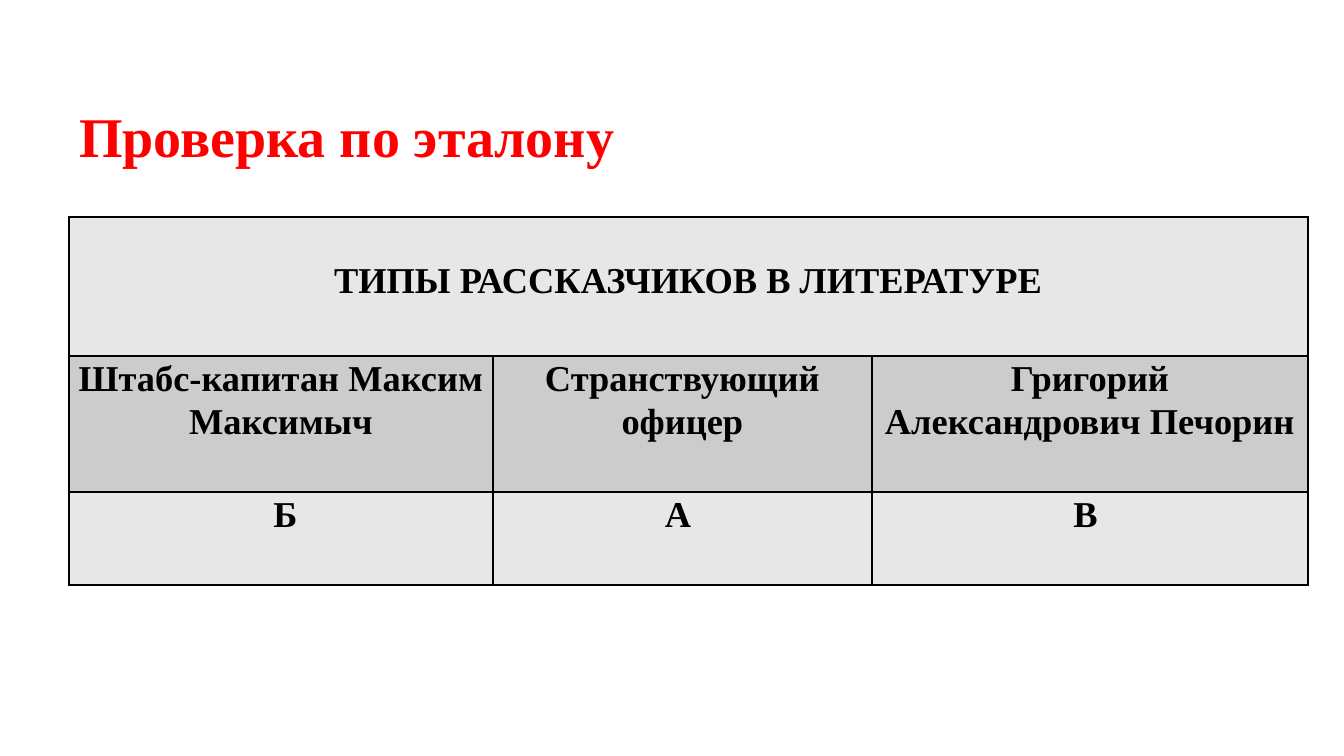
from lxml import etree
from pptx import Presentation
from pptx.dml.color import RGBColor
from pptx.enum.text import MSO_ANCHOR, PP_ALIGN
from pptx.oxml.ns import qn
from pptx.util import Pt

MIDDLE, TOP = MSO_ANCHOR.MIDDLE, MSO_ANCHOR.TOP
LEFT, CENTER = PP_ALIGN.LEFT, PP_ALIGN.CENTER
RED = RGBColor(0xFF, 0x00, 0x00)
BLACK = RGBColor(0x00, 0x00, 0x00)
LIGHT_GRAY = RGBColor(0xE7, 0xE7, 0xE7)
MID_GRAY = RGBColor(0xCC, 0xCC, 0xCC)
FONT = "Times New Roman"
EMU_PER_PX = 914400 / 100.8


def px(length):
    return round(length * EMU_PER_PX)


def format_paragraph(paragraph, size, color, alignment):
    paragraph.alignment = alignment
    paragraph.font.name = FONT
    paragraph.font.size = Pt(size)
    paragraph.font.bold = True
    paragraph.font.color.rgb = color


presentation = Presentation()
presentation.slide_width = px(1344)
presentation.slide_height = px(756)
slide = presentation.slides.add_slide(presentation.slide_layouts[5])

title = slide.shapes.title
title.left, title.top, title.width, title.height = px(69), px(57), px(1159), px(146)
title.text_frame.text = "Проверка по эталону"
title.text_frame.vertical_anchor = MIDDLE
title.text_frame.margin_top = px(15)
format_paragraph(title.text_frame.paragraphs[0], 40, RED, LEFT)

column_widths = [424, 379, 436]
row_heights = [139, 136, 93]
row_fills = [LIGHT_GRAY, MID_GRAY, LIGHT_GRAY]
row_texts = [
    ["ТИПЫ РАССКАЗЧИКОВ В ЛИТЕРАТУРЕ", "", ""],
    ["Штабс-капитан Максим Максимыч", "Странствующий офицер", "Григорий Александрович Печорин"],
    ["Б", "А", "В"],
]
table = slide.shapes.add_table(
    len(row_heights), len(column_widths),
    px(69), px(217), px(sum(column_widths)), px(sum(row_heights)),
).table
table.first_row = False
table.horz_banding = False
for column, width in zip(table.columns, column_widths):
    column.width = px(width)
for row, height, fill, texts in zip(table.rows, row_heights, row_fills, row_texts):
    row.height = px(height)
    for cell, text in zip(row.cells, texts):
        cell.text = text
        cell.vertical_anchor = TOP
        cell.margin_left = cell.margin_right = px(7)
        cell.margin_top = cell.margin_bottom = 0
        paragraph = cell.text_frame.paragraphs[0]
        paragraph.line_spacing = 1.07
        format_paragraph(paragraph, 26, BLACK, CENTER)
        properties = cell._tc.get_or_add_tcPr()
        for side in ("a:lnL", "a:lnR", "a:lnT", "a:lnB"):
            border = etree.SubElement(properties, qn(side), w=str(Pt(1)))
            border_fill = etree.SubElement(border, qn("a:solidFill"))
            etree.SubElement(border_fill, qn("a:srgbClr"), val=str(BLACK))
        cell.fill.solid()
        cell.fill.fore_color.rgb = fill

heading = table.cell(0, 0)
heading.merge(table.cell(0, 2))
heading.vertical_anchor = MIDDLE
heading.margin_bottom = px(13)

table.cell(2, 0).margin_left = px(16)
for column_index in (1, 2):
    table.cell(2, column_index).margin_right = px(16)

presentation.save("out.pptx")
